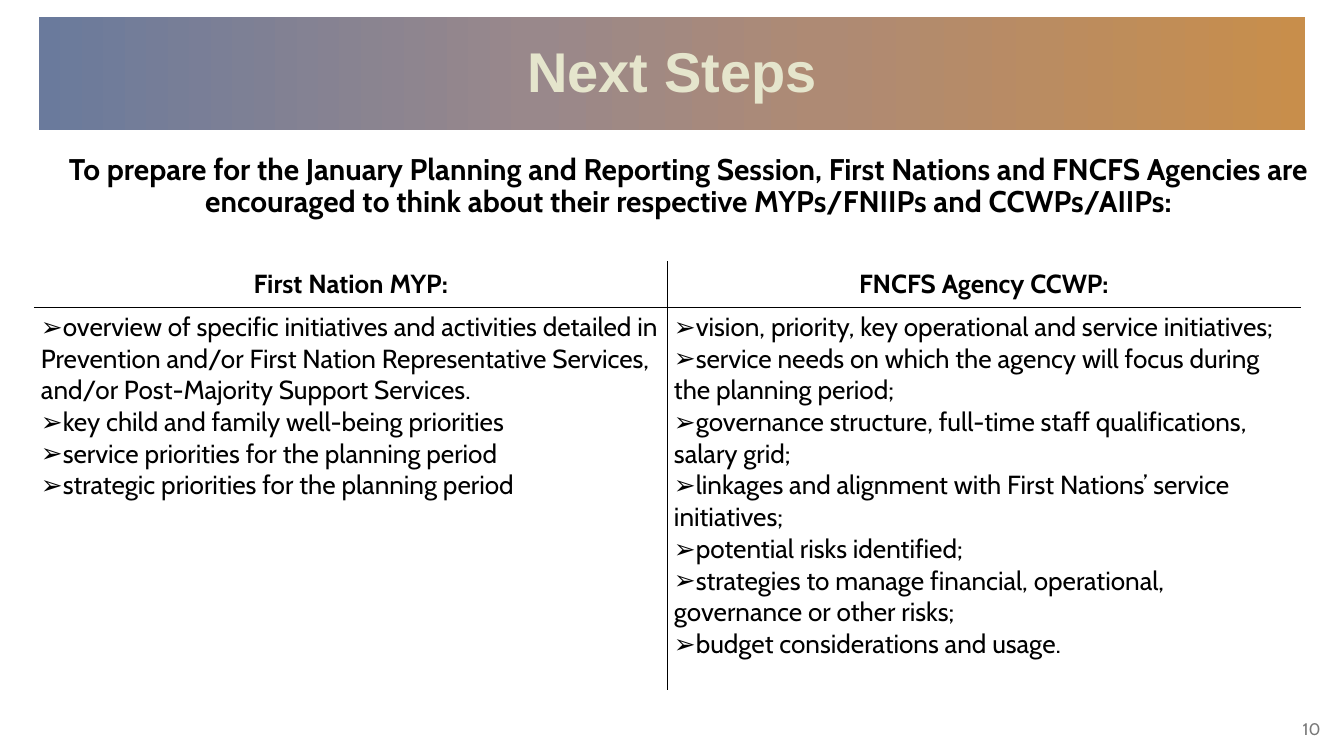
from copy import deepcopy
from dataclasses import dataclass

from lxml import etree
from pptx import Presentation, util as u
from pptx.dml.color import RGBColor
from pptx.enum import shapes, text
from pptx.oxml.ns import qn

SLIDE_W, SLIDE_H = 20, 11.25
BLACK, WHITE = "000000", "FFFFFF"
BANNER_STOPS = [(0, "6A7A9C"), (0.39, "99888B"), (0.62, "AE8A74"), (1, "C88E4B")]
HEADER_H, BODY_H = 0.69, 5.7


@dataclass
class Style:
    size: float
    color: str = BLACK
    bold: bool = False
    font: str = "Cabin"
    align: text.PP_ALIGN = text.PP_ALIGN.LEFT
    spacing: float | None = None


@dataclass
class Plan:
    heading: str
    topics: list[str]


TITLE = Style(60, "E5E5CC", True, "Arial", text.PP_ALIGN.CENTER, 0.9)
INTRO = Style(32, bold=True, align=text.PP_ALIGN.CENTER, spacing=0.9)
PAGE_NUMBER = Style(18, "797979", align=text.PP_ALIGN.RIGHT)
HEADING = Style(28, bold=True, align=text.PP_ALIGN.CENTER)
TOPIC = Style(28)

PLANS = [
    Plan("First Nation MYP:", [
        "overview of specific initiatives and activities detailed in Prevention and/or "
        "First Nation Representative Services, and/or Post-Majority Support Services.",
        "key child and family well-being priorities",
        "service priorities for the planning period",
        "strategic priorities for the planning period",
    ]),
    Plan("FNCFS Agency CCWP:", [
        "vision, priority, key operational and service initiatives;",
        "service needs on which the agency will focus during the planning period;",
        "governance structure, full-time staff qualifications, salary grid;",
        "linkages and alignment with First Nations’ service initiatives;",
        "potential risks identified;",
        "strategies to manage financial, operational, governance or other risks;",
        "budget considerations and usage.",
    ]),
]


def rgb(value: str) -> RGBColor:
    return RGBColor.from_string(value)


def box(left: float, top: float, width: float, height: float) -> list[int]:
    return [u.Inches(length) for length in (left, top, width, height)]


def write(frame, content: str, style: Style) -> None:
    """Fill a text frame, one paragraph per line, in one style."""
    frame.word_wrap = True
    frame.text = content
    for paragraph in frame.paragraphs:
        paragraph.alignment = style.align
        if style.spacing:
            paragraph.line_spacing = style.spacing
        for run in paragraph.runs:
            run.font.size = u.Pt(style.size)
            run.font.name = style.font
            run.font.bold = style.bold
            run.font.color.rgb = rgb(style.color)


def add_text(slide, place: list[int], content: str, style: Style, anchor) -> None:
    frame = slide.shapes.add_textbox(*place).text_frame
    write(frame, content, style)
    frame.vertical_anchor = anchor


def set_gradient(fill, stops: list[tuple[float, str]]) -> None:
    fill.gradient()
    fill.gradient_angle = 0
    first = fill.gradient_stops[0]._gs
    stop_list = first.getparent()
    while len(stop_list) < len(stops):
        stop_list.append(deepcopy(first))
    for stop, (position, color) in zip(fill.gradient_stops, stops):
        stop.position = position
        stop.color.rgb = rgb(color)


def add_banner(slide, title: str) -> None:
    banner = slide.shapes.add_shape(shapes.MSO_SHAPE.RECTANGLE, *box(0.58, 0.26, 18.84, 1.68))
    banner.shadow.inherit = False
    banner.line.fill.background()
    set_gradient(banner.fill, BANNER_STOPS)
    write(banner.text_frame, title, TITLE)
    banner.text_frame.vertical_anchor = text.MSO_ANCHOR.MIDDLE


def set_borders(cell, **colors: str) -> None:
    """Draw 1 pt borders; they go ahead of the cell's fill, in the order L, R, T, B."""
    properties = cell._tc.get_or_add_tcPr()
    for index, (side, color) in enumerate(colors.items()):
        line = etree.Element(qn(f"a:ln{side}"), w=str(u.Pt(1)))
        solid = etree.SubElement(line, qn("a:solidFill"))
        etree.SubElement(solid, qn("a:srgbClr"), val=color)
        properties.insert(index, line)


def add_bullets(frame) -> None:
    for paragraph in frame.paragraphs:
        properties = paragraph._p.get_or_add_pPr()
        properties.set("marL", "0")
        properties.set("indent", "0")
        etree.SubElement(properties, qn("a:buFont"), typeface="Arial")
        etree.SubElement(properties, qn("a:buChar"), char="➢")


def add_plan_table(slide, plans: list[Plan]) -> None:
    place = box(0.51, 3.89, 18.84, HEADER_H + BODY_H)
    table = slide.shapes.add_table(2, len(plans), *place).table
    table.first_row = table.horz_banding = False
    for row, height in zip(table.rows, (HEADER_H, BODY_H)):
        row.height = u.Inches(height)
    last = len(plans) - 1
    for column, plan in enumerate(plans):
        header, body = table.cell(0, column), table.cell(1, column)
        write(header.text_frame, plan.heading, HEADING)
        header.vertical_anchor = text.MSO_ANCHOR.MIDDLE
        write(body.text_frame, "\n".join(plan.topics), TOPIC)
        add_bullets(body.text_frame)
        left = BLACK if column > 0 else WHITE
        right = BLACK if column < last else WHITE
        for cell, top, bottom in ((header, WHITE, BLACK), (body, BLACK, WHITE)):
            cell.fill.background()
            set_borders(cell, L=left, R=right, T=top, B=bottom)


def main() -> None:
    deck = Presentation()
    deck.slide_width, deck.slide_height = u.Inches(SLIDE_W), u.Inches(SLIDE_H)
    slide = deck.slides.add_slide(deck.slide_layouts[6])
    add_text(
        slide, box(0.53, 2.25, 19.44, 9.67),
        "To prepare for the January Planning and Reporting Session, First Nations and FNCFS "
        "Agencies are encouraged to think about their respective MYPs/FNIIPs and CCWPs/AIIPs:",
        INTRO, text.MSO_ANCHOR.TOP,
    )
    add_banner(slide, "Next Steps")
    add_text(slide, box(15.25, 10.55, 4.5, 0.6), "10", PAGE_NUMBER, text.MSO_ANCHOR.MIDDLE)
    add_plan_table(slide, PLANS)
    deck.save("out.pptx")


if __name__ == "__main__":
    main()
